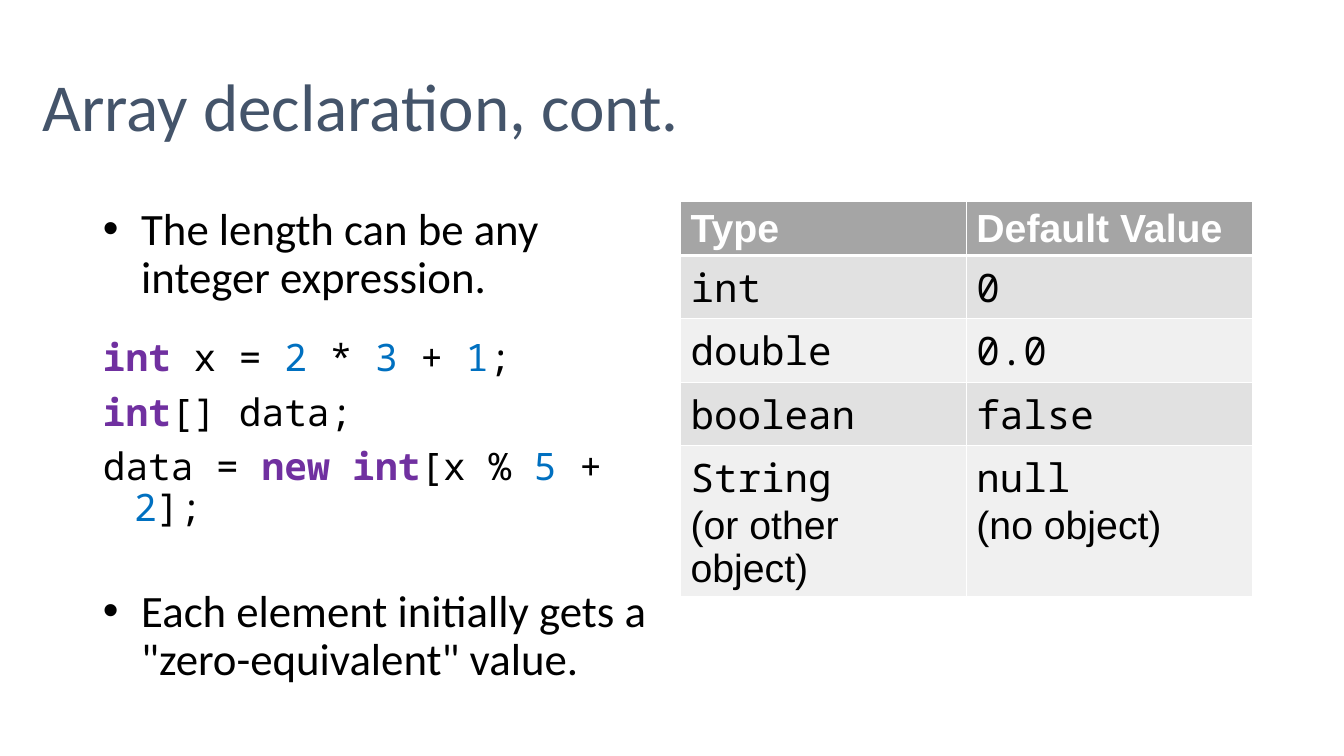
from lxml import etree
from pptx import Presentation
from pptx import util as u
from pptx.dml.color import RGBColor
from pptx.enum import text
from pptx.oxml import ns

COLORS = {
    "title": "44546A", "body": "000000", "keyword": "7030A0", "number": "0070C0",
    "header": "A5A5A5", "odd": "E1E1E1", "even": "F0F0F0", "white": "FFFFFF",
}
SANS, MONO, TABLE_FONT = "Calibri", "Noto Sans Mono", "Arial"

CODE = [
    [("int ", "keyword"), ("x = ", "body"), ("2", "number"), (" * ", "body"),
     ("3", "number"), (" + ", "body"), ("1", "number"), (";", "body")],
    [("int", "keyword"), ("[] data;", "body")],
    [("data = ", "body"), ("new int", "keyword"), ("[x % ", "body"),
     ("5", "number"), (" + ", "body"), ("2", "number"), ("];", "body")],
]
DEFAULTS = [
    ("Type", "Default Value"),
    ("int", "0"),
    ("double", "0.0"),
    ("boolean", "false"),
    ("String\n(or other object)", "null\n(no object)"),
]


def rgb(name):
    return RGBColor.from_string(COLORS[name])


def set_font(font, name, size, color, bold=False):
    font.name, font.size, font.bold = name, u.Pt(size), bold
    font.color.rgb = rgb(color)


def place(shape, left, top, width, height):
    shape.left, shape.top = u.Inches(left), u.Inches(top)
    shape.width, shape.height = u.Inches(width), u.Inches(height)
    shape.text_frame.auto_size = text.MSO_AUTO_SIZE.NONE


def fill_title(title):
    place(title, 0.42, 0, 12.5, 1.45)
    frame = title.text_frame
    frame.text = "Array declaration, cont."
    frame.vertical_anchor = text.MSO_ANCHOR.BOTTOM
    frame.margin_left = frame.margin_right = frame.margin_bottom = 0
    paragraph = frame.paragraphs[0]
    paragraph.alignment = text.PP_ALIGN.LEFT
    paragraph.line_spacing = 0.9
    set_font(paragraph.font, SANS, 48, "title")


def format_paragraph(paragraph, indent, space_before):
    paragraph.line_spacing = 0.9
    paragraph.space_before = u.Pt(space_before)
    properties = paragraph._p.get_or_add_pPr()
    properties.set("marL", str(u.Inches(indent)))
    properties.set("indent", str(-u.Inches(indent)))
    return properties


def write_bullet(paragraph, wording, space_before=10):
    format_paragraph(paragraph, 0.38, space_before)
    paragraph.text = wording
    set_font(paragraph.font, SANS, 32, "body")


def write_code(paragraph, tokens, space_before=10):
    properties = format_paragraph(paragraph, 0.31, space_before)
    etree.SubElement(properties, ns.qn("a:buNone"))
    for wording, color in tokens:
        run = paragraph.add_run()
        run.text = wording
        set_font(run.font, MONO, 27, color, bold=color == "keyword")


def fill_body(body):
    place(body, 0.92, 2, 5.67, 4.76)
    frame = body.text_frame
    write_bullet(frame.paragraphs[0], "The length can be any integer expression.")
    for index, tokens in enumerate(CODE):
        write_code(frame.add_paragraph(), tokens, 10 if index else 25)
    write_bullet(frame.add_paragraph(),
                 'Each element initially gets a "zero-equivalent" value.', 42)


def add_borders(cell, header):
    properties = cell._tc.get_or_add_tcPr()
    for side in ("L", "R", "T", "B"):
        width = 3 if header and side == "B" else 1
        line = etree.SubElement(properties, ns.qn(f"a:ln{side}"), w=str(u.Pt(width)))
        fill = etree.SubElement(line, ns.qn("a:solidFill"))
        etree.SubElement(fill, ns.qn("a:srgbClr"), val=COLORS["white"])


def fill_cell(cell, wording, row):
    header = row == 0
    add_borders(cell, header)
    cell.fill.solid()
    cell.fill.fore_color.rgb = rgb("header" if header else "odd" if row % 2 else "even")
    cell.text = wording
    for index, paragraph in enumerate(cell.text_frame.paragraphs):
        paragraph.alignment = text.PP_ALIGN.LEFT
        set_font(paragraph.font, TABLE_FONT if header or index else MONO, 28,
                 "white" if header else "body", bold=header)


def add_defaults_table(slide):
    frame = slide.shapes.add_table(
        len(DEFAULTS), 2, u.Inches(6.75), u.Inches(2), u.Inches(5.67), u.Inches(2.05))
    for row, wordings in enumerate(DEFAULTS):
        for column, wording in enumerate(wordings):
            fill_cell(frame.table.cell(row, column), wording, row)


def main():
    presentation = Presentation()
    presentation.slide_width = u.Inches(13.33)
    presentation.slide_height = u.Inches(7.5)
    slide = presentation.slides.add_slide(presentation.slide_layouts[1])
    fill_title(slide.shapes.title)
    fill_body(slide.placeholders[1])
    add_defaults_table(slide)
    presentation.save("out.pptx")


if __name__ == "__main__":
    main()
